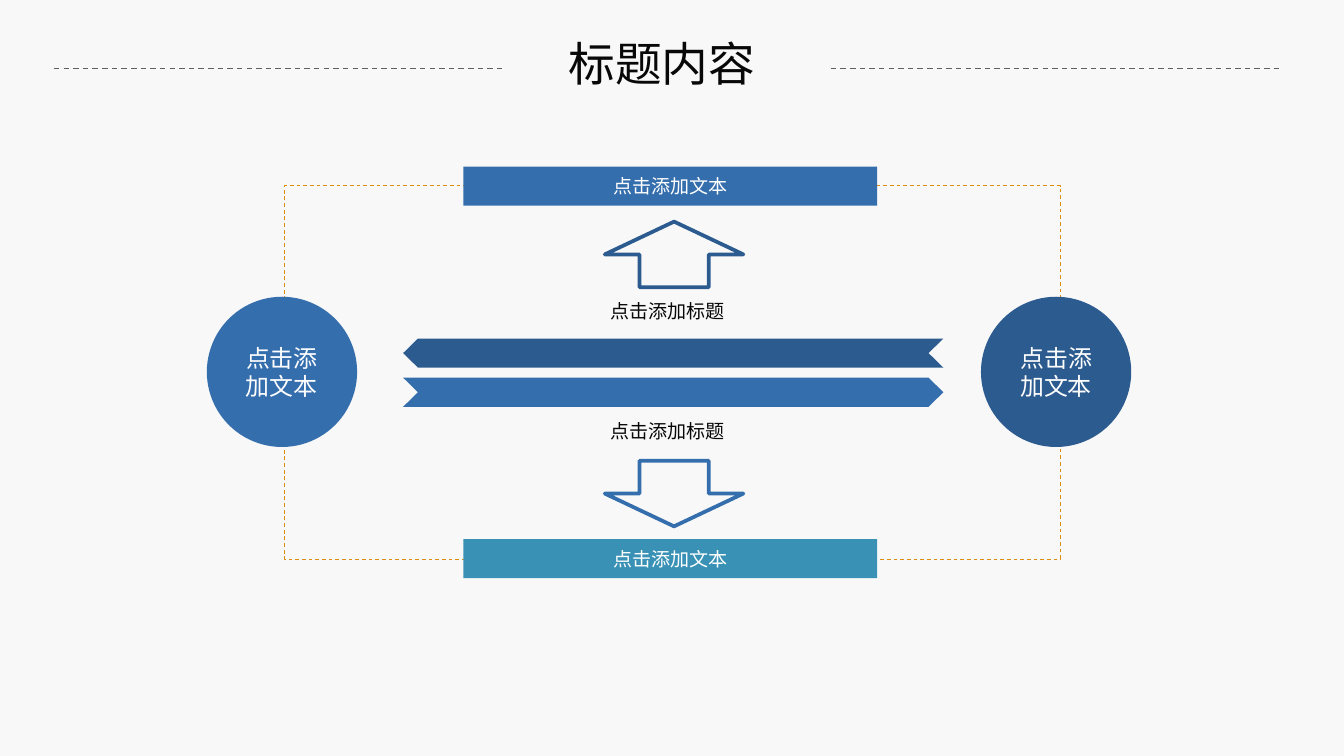
from lxml import etree
from pptx import Presentation
from pptx.dml.color import RGBColor
from pptx.enum.dml import MSO_LINE
from pptx.enum.shapes import MSO_CONNECTOR, MSO_SHAPE
from pptx.enum.text import MSO_ANCHOR, MSO_AUTO_SIZE, PP_ALIGN
from pptx.oxml.ns import qn
from pptx.util import Cm, Pt

FONT = "Noto Sans CJK SC"
RECTANGLE, OVAL = MSO_SHAPE.RECTANGLE, MSO_SHAPE.OVAL
UP_ARROW, DOWN_ARROW = MSO_SHAPE.UP_ARROW, MSO_SHAPE.DOWN_ARROW
DASH, STRAIGHT = MSO_LINE.DASH, MSO_CONNECTOR.STRAIGHT
LEFT, CENTER = PP_ALIGN.LEFT, PP_ALIGN.CENTER
TOP, MIDDLE = MSO_ANCHOR.TOP, MSO_ANCHOR.MIDDLE
GROW = MSO_AUTO_SIZE.SHAPE_TO_FIT_TEXT

BLUE, NAVY, TEAL = "356EAD", "2C5B8F", "3992B5"
INK, WHITE, GREY, ORANGE = "080808", "FFFFFF", "5F5F5F", "DC8C0A"
rgb = RGBColor.from_string


def write(shape, text, size, color, align=CENTER, anchor=MIDDLE,
          insets=(0.15, 0.08), wrap=True, grow=False):
    frame = shape.text_frame
    frame.margin_left = frame.margin_right = Cm(insets[0])
    frame.margin_top = frame.margin_bottom = Cm(insets[1])
    frame.word_wrap = wrap
    frame.vertical_anchor = anchor
    if grow:
        frame.auto_size = GROW
    paragraph = frame.paragraphs[0]
    paragraph.alignment = align
    run = paragraph.add_run()
    run.text = text
    run.font.size = Pt(size)
    run.font.color.rgb = rgb(color)
    run.font.name = FONT
    etree.SubElement(run.font._element, qn("a:ea"), typeface=FONT)


def paint(shape, fill=None, line=None, width=0.5):
    shape.shadow.inherit = False
    if fill:
        shape.fill.solid()
        shape.fill.fore_color.rgb = rgb(fill)
    else:
        shape.fill.background()
    if line:
        shape.line.color.rgb = rgb(line)
        shape.line.width = Pt(width)
    else:
        shape.line.fill.background()


prs = Presentation()
prs.slide_width, prs.slide_height = Cm(25.4), Cm(14.29)
slide = prs.slides.add_slide(prs.slide_layouts[6])
slide.background.fill.solid()
slide.background.fill.fore_color.rgb = rgb("F8F8F8")
shapes = slide.shapes

# Title between two dashed rules
title = shapes.add_textbox(Cm(10.31), Cm(0.53), Cm(4.39), Cm(1.32))
write(title, "标题内容", 25, INK, anchor=TOP, insets=(0.25, 0.13), grow=True)
for x in (1.02, 15.7):
    rule = shapes.add_connector(STRAIGHT, Cm(x), Cm(1.3), Cm(x + 8.48), Cm(1.3))
    rule.line.color.rgb = rgb(GREY)
    rule.line.width = Pt(0.75)
    rule.line.dash_style = DASH
    etree.SubElement(rule._element.spPr, qn("a:effectLst"))

# Dashed loop behind the circles and bars
loop = shapes.add_shape(RECTANGLE, Cm(5.38), Cm(3.51), Cm(14.66), Cm(7.06))
paint(loop, line=ORANGE)
loop.line.dash_style = DASH

# Circles on the left and right
for x, color in ((3.91, BLUE), (18.54, NAVY)):
    circle = shapes.add_shape(OVAL, Cm(x), Cm(5.61), Cm(2.84), Cm(2.84))
    paint(circle, color)
    write(circle, "点击添加文本", 12.8, WHITE)

# Upper and lower halves: caption, outlined arrow, bar
for caption_y, arrow_kind, arrow_y, arrow_color, bar_y, bar_color in (
    (5.59, UP_ARROW, 4.19, NAVY, 3.15, BLUE),
    (7.85, DOWN_ARROW, 8.71, BLUE, 10.19, TEAL),
):
    caption = shapes.add_textbox(Cm(11.38), Cm(caption_y), Cm(2.49), Cm(0.58))
    write(caption, "点击添加标题", 10.2, INK, align=LEFT, anchor=TOP,
          wrap=False, grow=True)
    arrow = shapes.add_shape(arrow_kind, Cm(11.43), Cm(arrow_y), Cm(2.62), Cm(1.24))
    paint(arrow, line=arrow_color, width=2)
    bar = shapes.add_shape(RECTANGLE, Cm(8.76), Cm(bar_y), Cm(7.82), Cm(0.74))
    paint(bar, bar_color)
    write(bar, "点击添加文本", 10.2, WHITE)

# Opposed ribbons: each runs from its notched tail to its pointed tip
NOTCH, HEIGHT = 0.28, 0.55
for tail, tip, y, color in ((7.62, 17.83, 7.14, BLUE), (17.83, 7.62, 6.4, NAVY)):
    step = NOTCH if tip > tail else -NOTCH
    middle, bottom = y + HEIGHT / 2, y + HEIGHT
    outline = [(tail, y), (tip - step, y), (tip, middle),
               (tip - step, bottom), (tail, bottom), (tail + step, middle)]
    points = [(Cm(px), Cm(py)) for px, py in outline]
    builder = shapes.build_freeform(*points[0])
    builder.add_line_segments(points[1:], close=True)
    paint(builder.convert_to_shape(), color)

prs.save("out.pptx")
